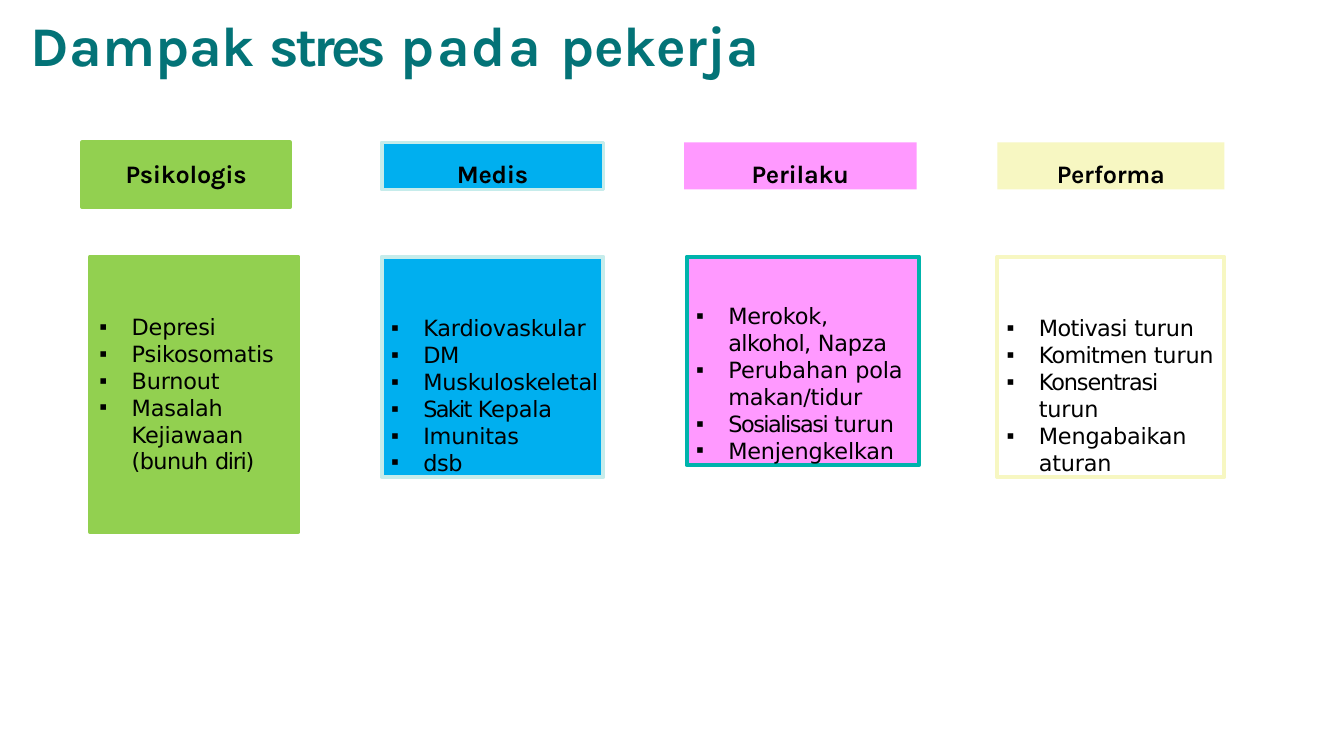
from collections import namedtuple
from lxml.etree import SubElement
from pptx import Presentation
from pptx.dml.color import RGBColor
from pptx.enum.shapes import MSO_SHAPE
from pptx.enum.text import MSO_ANCHOR, PP_ALIGN
from pptx.oxml.ns import qn
from pptx.util import Inches, Pt

COLORS = {
    "title": "037377", "text": "000000", "green": "92D050", "blue": "00AFEF",
    "pale_blue": "C6ECEB", "pink": "FF99FF", "teal": "00B3AC", "cream": "F7F7C2",
}
SLIDE_WIDTH = Inches(10)
SLIDE_HEIGHT = SLIDE_WIDTH * 9 // 16
CELL = SLIDE_WIDTH / 100
HEADER_ROW, BODY_ROW = 10.6, 19.1

Box = namedtuple("Box", "column row columns rows")
Look = namedtuple("Look", "fill line weight")
Impact = namedtuple("Impact", "name header header_look body body_look text_row items")

IMPACTS = [
    Impact("Psikologis", Box(6.1, HEADER_ROW, 15.5, 4.8), Look("green", "green", 2.2),
           Box(6.7, BODY_ROW, 15.5, 20.5), Look("green", "green", 2.2), 4.2, [
        [("Depresi", -0.1)],
        [("Psikosomatis", -0.1)],
        [("Burnout", -0.1)],
        [("Masalah Kejiawaan ", -0.1), ("(bunuh ", -0.3), ("diri)", -0.7)],
    ]),
    Impact("Medis", Box(28.4, HEADER_ROW, 16.5, 3.5), Look("blue", "pale_blue", 2),
           Box(28.4, BODY_ROW, 16.5, 16.4), Look("blue", "pale_blue", 2.2), 4.3, [
        [("Kardiovaskular", -0.1)],
        [("DM", -0.2)],
        [("Muskuloskeletal", -0.1)],
        [("Sakit ", -0.9), ("Kepala", -0.1)],
        [("Imunitas", -0.1)],
        [("dsb", -0.2)],
    ]),
    Impact("Perilaku", Box(50.9, HEADER_ROW, 17.3, 3.5), Look("pink", None, 0),
           Box(51.1, BODY_ROW, 17.3, 15.5), Look("pink", "teal", 2.2), 3.4, [
        [("Merokok, ", -0.1), ("alkohol, ", -0.3), ("Napza", -0.1)],
        [("Perubahan ", 0), ("pola makan/tidur", -0.1)],
        [("Sosialisasi ", -0.8), ("turun", -0.1)],
        [("Menjengkelkan", -0.1)],
    ]),
    Impact("Performa", Box(74.2, HEADER_ROW, 16.9, 3.5), Look("cream", None, 0),
           Box(74.2, BODY_ROW, 16.9, 16.4), Look(None, "cream", 2.2), 4.3, [
        [("Motivasi ", -0.3), ("turun", -0.1)],
        [("Komitmen ", -0.4), ("turun", -0.1)],
        [("Konsentrasi ", -0.6), ("turun", -0.1)],
        [("Mengabaikan aturan", -0.1)],
    ]),
]


def cells(count):
    return round(count * CELL)


def color(name):
    return RGBColor.from_string(COLORS[name])


def prepare_frame(shape, left=0, top=0, right=0):
    frame = shape.text_frame
    frame.word_wrap = True
    frame.vertical_anchor = MSO_ANCHOR.TOP
    frame.margin_left, frame.margin_top = cells(left), cells(top)
    frame.margin_right, frame.margin_bottom = cells(right), 0
    return frame


def write_spans(para, spans, font, size, ink="text", bold=False):
    for text, spacing in spans:
        span = para.add_run()
        span.text = text
        span.font.name = font
        span.font.size = Pt(size)
        span.font.bold = bold
        span.font.color.rgb = color(ink)
        span.font._element.set("spc", str(round(spacing * 100)))


def add_panel(page, box, look):
    panel = page.shapes.add_shape(MSO_SHAPE.RECTANGLE, *map(cells, box))
    panel.shadow.inherit = False
    if look.fill:
        panel.fill.solid()
        panel.fill.fore_color.rgb = color(look.fill)
    else:
        panel.fill.background()
    if look.line:
        panel.line.color.rgb = color(look.line)
        panel.line.width = Pt(look.weight)
    else:
        panel.line.fill.background()
    return panel


def add_bullet(para):
    properties = para._p.get_or_add_pPr()
    properties.set("marL", str(cells(3.1)))
    properties.set("indent", str(-cells(2.4)))
    SubElement(properties, qn("a:buFont")).set("typeface", "Liberation Sans")
    SubElement(properties, qn("a:buChar")).set("char", "▪")


def add_title(page, box):
    title = page.shapes.add_textbox(*map(cells, box))
    para = prepare_frame(title, left=0.3, top=0.1).paragraphs[0]
    spans = [("Dampak ", 0), ("stres", -2.1), (" ", -0.5), ("pada ", 1.2), ("pekerja", -0.1)]
    write_spans(para, spans, "Karla", 30, "title", True)


def add_header(page, box, look, name):
    para = prepare_frame(add_panel(page, box, look), top=1.2).paragraphs[0]
    para.alignment = PP_ALIGN.CENTER
    write_spans(para, [(name, -0.1)], "Karla", 13.5, bold=True)


def add_body(page, box, look, text_row, items):
    frame = prepare_frame(add_panel(page, box, look), top=text_row, right=0.3)
    for index, spans in enumerate(items):
        para = frame.add_paragraph() if index else frame.paragraphs[0]
        para.alignment = PP_ALIGN.LEFT
        add_bullet(para)
        write_spans(para, spans, "DejaVu Sans", 12)


def main():
    deck = Presentation()
    deck.slide_width, deck.slide_height = SLIDE_WIDTH, SLIDE_HEIGHT
    page = deck.slides.add_slide(deck.slide_layouts[6])
    add_title(page, Box(2, 0.7, 69.7, 5.2))
    for impact in IMPACTS:
        add_body(page, impact.body, impact.body_look, impact.text_row, impact.items)
        add_header(page, impact.header, impact.header_look, impact.name)
    deck.save("out.pptx")


if __name__ == "__main__":
    main()
